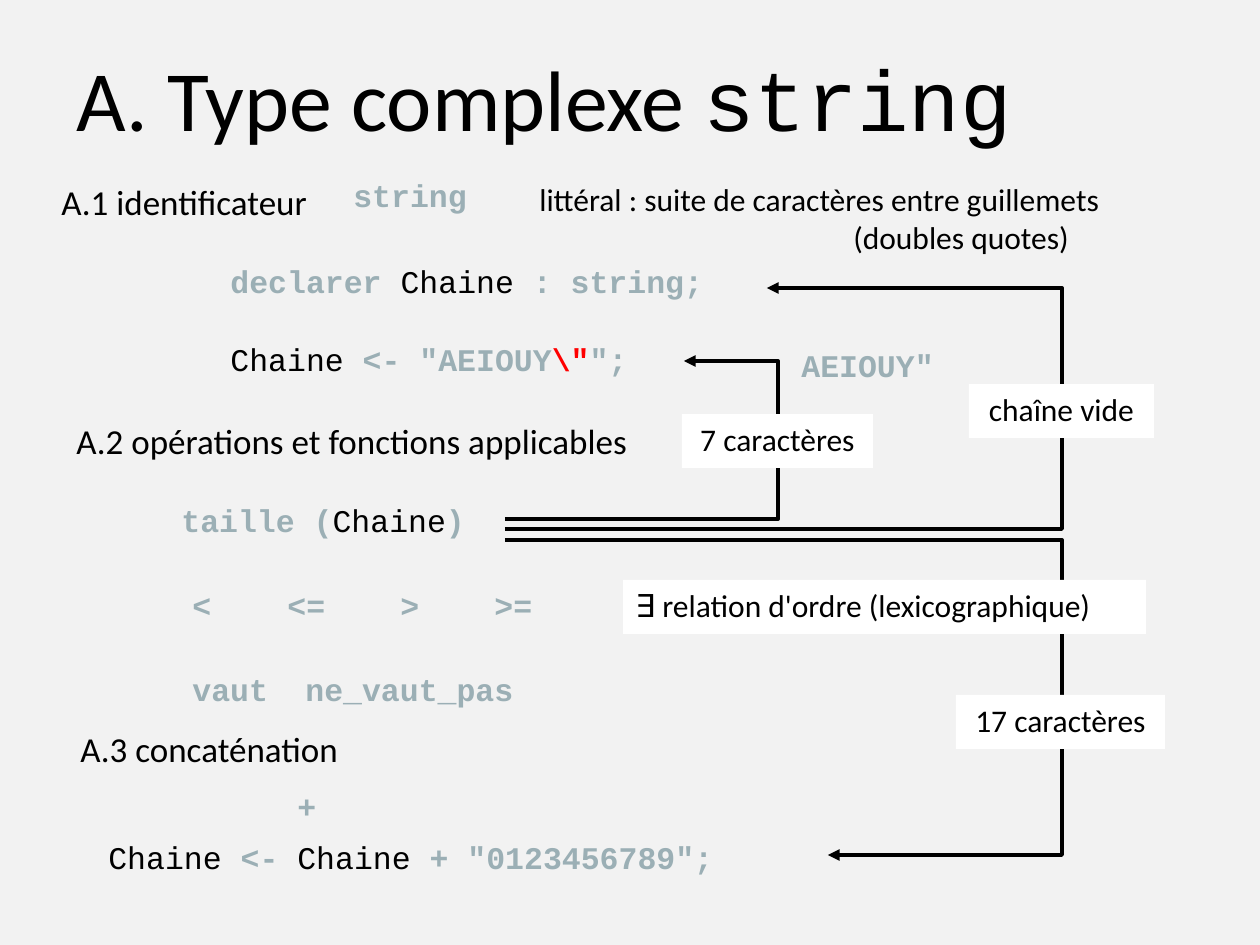
"""Build the slide that presents the string type: identifier, operations, concatenation."""
from lxml import etree
from pptx import Presentation
from pptx.dml.color import RGBColor
from pptx.enum.shapes import MSO_SHAPE
from pptx.enum.text import MSO_ANCHOR, MSO_AUTO_SIZE, PP_ALIGN
from pptx.oxml.ns import qn
from pptx.util import Pt

PX = 914400 // 126
LEFT, CENTER = PP_ALIGN.LEFT, PP_ALIGN.CENTER
MIDDLE, NO_FIT = MSO_ANCHOR.MIDDLE, MSO_AUTO_SIZE.NONE
RECTANGLE = MSO_SHAPE.RECTANGLE
BODY, CODE = "Calibri", "Courier New"
COLORS = {
    "background": "F2F2F2",
    "text": "000000",
    "keyword": "9BAFB5",
    "escape": "FF0000",
    "label": "FFFFFF",
}


def rgb(name):
    return RGBColor.from_string(COLORS[name])


def write(box, lines, font=BODY, size=18, align=LEFT):
    frame = box.text_frame
    frame.word_wrap = True
    frame.vertical_anchor = MSO_ANCHOR.TOP
    if align == LEFT:
        frame.margin_right = 0
    for index, spans in enumerate(lines):
        para = frame.paragraphs[0] if index == 0 else frame.add_paragraph()
        para.alignment = align
        para.font.name = font
        para.font.size = Pt(size)
        for text, color in spans:
            span = para.add_run()
            span.text = text
            span.font.color.rgb = rgb(color)
            span.font.bold = color != "text"


deck = Presentation()
deck.slide_width = 1260 * PX
deck.slide_height = 945 * PX
page = deck.slides.add_slide(deck.slide_layouts[5])
page.background.fill.solid()
page.background.fill.fore_color.rgb = rgb("background")

title = page.shapes.title
title.left, title.top, title.width, title.height = 64 * PX, 34 * PX, 1133 * PX, 126 * PX
title.text_frame.auto_size = NO_FIT
title.text_frame.vertical_anchor = MIDDLE
heading = title.text_frame.paragraphs[0]
heading.alignment = LEFT
heading.font.size = Pt(49)
heading.font.color.rgb = rgb("text")
for text, font in (("A. Type complexe ", BODY), ("string", CODE)):
    span = heading.add_run()
    span.text = text
    span.font.name = font

sections = [
    (49, 174, 271, "A.1 identificateur"),
    (64, 413, 578, "A.2 opérations et fonctions applicables"),
    (68, 721, 290, "A.3 concaténation"),
]
for left, top, width, text in sections:
    box = page.shapes.add_textbox(left * PX, top * PX, width * PX, 55 * PX)
    write(box, [[(text, "text")]], size=20)

literal = page.shapes.add_textbox(527 * PX, 174 * PX, 632 * PX, 89 * PX)
write(literal, [
    [("littéral : suite de caractères entre guillemets", "text")],
    [("(doubles quotes)", "text")],
])
quotes = literal.text_frame.paragraphs[1]._p.get_or_add_pPr()
quotes.set("marL", str(314 * PX))
quotes.set("indent", "0")

declaration = page.shapes.add_textbox(218 * PX, 256 * PX, 551 * PX, 139 * PX)
write(declaration, [
    [("declarer ", "keyword"), ("Chaine", "text"), (" : string;", "keyword")],
    [("Chaine", "text"), (" <- \"AEIOUY", "keyword"), ("\\\"", "escape"), ("\";", "keyword")],
], CODE)
declaration.text_frame.paragraphs[1].space_before = Pt(23)

code_lines = [
    (341, 170, 151, [("string", "keyword")], []),
    (180, 580, 403, [("<\t<=\t>\t>=", "keyword")], [95, 208, 302]),
    (180, 664, 382, [("vaut\tne_vaut_pas", "keyword")], [113]),
    (285, 781, 47, [("+", "keyword")], []),
    (169, 495, 340, [("taille (", "keyword"), ("Chaine", "text"), (")", "keyword")], []),
    (96, 832, 697, [("Chaine", "text"), (" <- ", "keyword"), ("Chaine", "text"),
                    (" + \"0123456789\";", "keyword")], []),
    (789, 340, 173, [("AEIOUY\"", "keyword")], []),
]
for left, top, width, spans, stops in code_lines:
    box = page.shapes.add_textbox(left * PX, top * PX, width * PX, 54 * PX)
    write(box, [spans], CODE)
    if stops:
        tabs = etree.Element(qn("a:tabLst"))
        for stop in stops:
            etree.SubElement(tabs, qn("a:tab"), pos=str(stop * PX), algn="l")
        box.text_frame.paragraphs[0]._p.get_or_add_pPr().insert(0, tabs)

results = [
    (529, 1062, 288, 767, (969, 384, 185), "chaîne vide"),
    (519, 778, 361, 684, (682, 414, 191), "7 caractères"),
    (540, 1062, 855, 828, (956, 695, 209), "17 caractères"),
]
labels = []
for start, corner, end, tip, place, text in results:
    group = page.shapes.add_group_shape()
    builder = group.shapes.build_freeform(505 * PX, start * PX, scale=1.0)
    bends = [(corner, start), (corner, end), (tip, end)]
    builder.add_line_segments([(x * PX, y * PX) for x, y in bends], close=False)
    arrow = builder.convert_to_shape()
    arrow.shadow.inherit = False
    arrow.fill.background()
    arrow.line.color.rgb = rgb("text")
    arrow.line.width = Pt(2.25)
    etree.SubElement(arrow.line._get_or_add_ln(), qn("a:tailEnd"), type="triangle")
    labels.append((group.shapes, place, text, CENTER))
labels.append((page.shapes, (623, 580, 523), "∃ relation d'ordre (lexicographique)", LEFT))

for shapes, (left, top, width), text, align in labels:
    label = shapes.add_shape(RECTANGLE, left * PX, top * PX, width * PX, 54 * PX)
    label.shadow.inherit = False
    label.fill.solid()
    label.fill.fore_color.rgb = rgb("label")
    label.line.fill.background()
    write(label, [[(text, "text")]], align=align)

deck.save("out.pptx")
